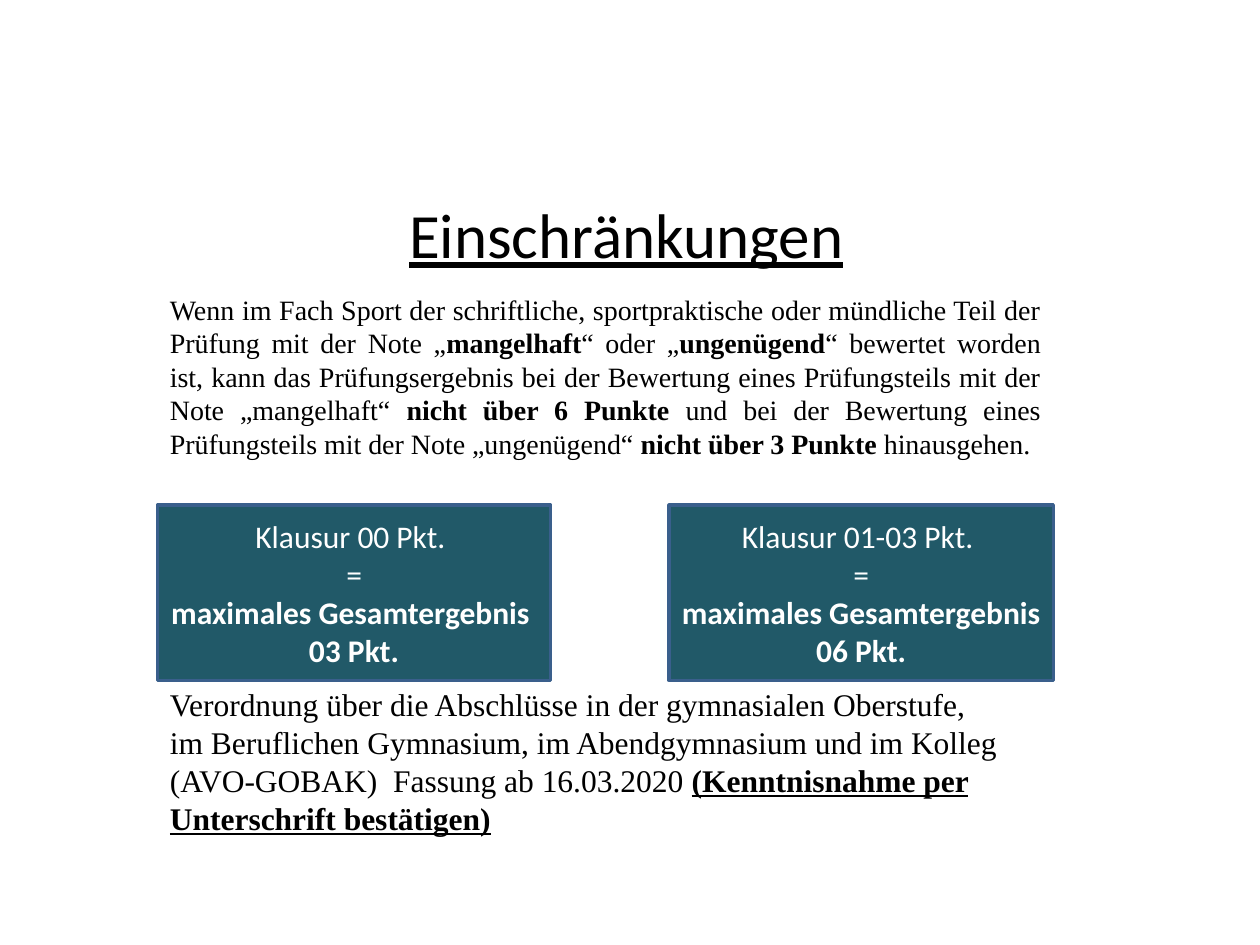
"""Builds the slide on grading limits in the sports examination."""
from pptx import Presentation
from pptx.dml.color import RGBColor
from pptx.enum.shapes import MSO_SHAPE
from pptx.enum.text import MSO_ANCHOR, PP_ALIGN
from pptx.util import Inches, Pt

RECT = MSO_SHAPE.RECTANGLE
MIDDLE = MSO_ANCHOR.MIDDLE
LEFT, CENTER, JUSTIFY = PP_ALIGN.LEFT, PP_ALIGN.CENTER, PP_ALIGN.JUSTIFY
COLORS = {"text": "000000", "box": "215968", "border": "3A5F8C", "box_text": "FFFFFF"}
SERIF, SANS = "Times New Roman", "Calibri"
BOLD = {"bold": True}
BOLD_UNDERLINE = {"bold": True, "underline": True}


def rgb(name):
    return RGBColor.from_string(COLORS[name])


def write(tf, paragraphs, align, color, **base):
    tf.word_wrap = True
    for i, runs in enumerate(paragraphs):
        p = tf.paragraphs[0] if i == 0 else tf.add_paragraph()
        p.alignment = align
        for text, extra in runs:
            r = p.add_run()
            r.text = text
            r.font.color.rgb = rgb(color)
            for key, value in {**base, **extra}.items():
                setattr(r.font, key, value)


prs = Presentation()
prs.slide_width, prs.slide_height = Inches(10), Inches(7.5)
s = prs.slides.add_slide(prs.slide_layouts[5])

title = s.shapes.title
title.left, title.top, title.width, title.height = map(Inches, (0.47, 1.31, 9, 1.09))
title.text_frame.vertical_anchor = MIDDLE
write(title.text_frame, [[("Einschränkungen", {})]], CENTER, "text",
      name=SANS, size=Pt(36), underline=True)

rule = [[
    ("Wenn im Fach Sport der schriftliche, sportpraktische oder mündliche Teil der "
     "Prüfung mit der Note „", {}),
    ("mangelhaft", BOLD),
    ("“ oder „", {}),
    ("ungenügend", BOLD),
    ("“ bewertet worden ist, kann das Prüfungsergebnis bei der Bewertung eines "
     "Prüfungsteils mit der Note „mangelhaft“ ", {}),
    ("nicht über 6 Punkte ", BOLD),
    ("und bei der Bewertung eines Prüfungsteils mit der Note „ungenügend“ ", {}),
    ("nicht über 3 Punkte", BOLD),
    (" hinausgehen.", {}),
]]
regulation = [
    [("Verordnung über die Abschlüsse in der gymnasialen Oberstufe,", {})],
    [("im Beruflichen Gymnasium, im Abendgymnasium und im Kolleg", {})],
    [("(AVO-GOBAK)  Fassung ab 16.03.2020 ", {}),
     ("(Kenntnisnahme per Unterschrift bestätigen)", BOLD_UNDERLINE)],
]
for top, height, paragraphs, align, size in [
    (2.27, 1.45, rule, JUSTIFY, 16),
    (5.39, 1.31, regulation, LEFT, 18),
]:
    tb = s.shapes.add_textbox(Inches(1.25), Inches(top), Inches(7.11), Inches(height))
    write(tb.text_frame, paragraphs, align, "text", name=SERIF, size=Pt(size))

for left, width, exam, limit in [(1.25, 3.12, "00", "03"), (5.31, 3.05, "01-03", "06")]:
    box = s.shapes.add_shape(RECT, Inches(left), Inches(4.01), Inches(width), Inches(1.39))
    box.shadow.inherit = False
    box.fill.solid()
    box.fill.fore_color.rgb = rgb("box")
    box.line.color.rgb = rgb("border")
    box.line.width = Pt(2)
    tf = box.text_frame
    tf.vertical_anchor = MIDDLE
    tf.margin_left = tf.margin_right = Inches(0.08)
    lines = [
        [(f"Klausur {exam} Pkt. ", {})],
        [("=", {})],
        [("maximales Gesamtergebnis ", BOLD)],
        [(f"{limit} Pkt.", BOLD)],
    ]
    write(tf, lines, CENTER, "box_text", name=SANS, size=Pt(18))

prs.save("out.pptx")
